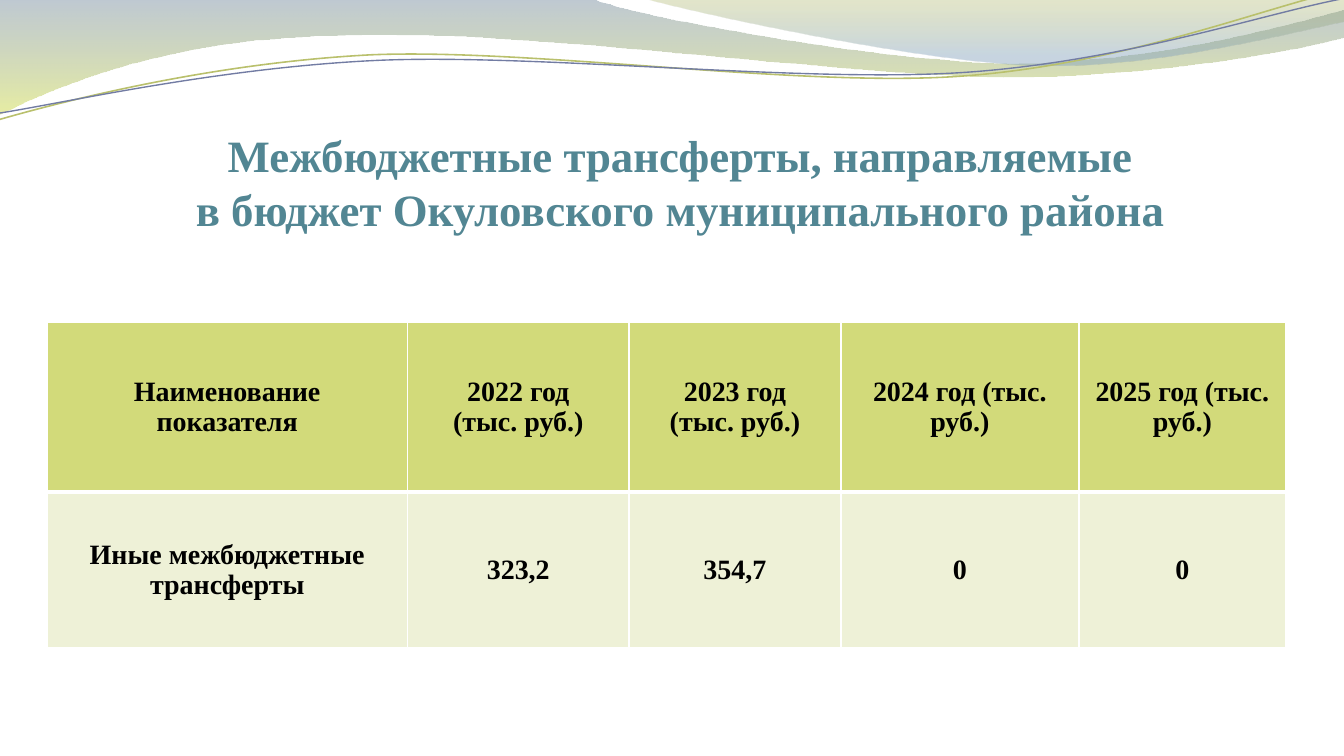
import lxml.etree
import pptx
import pptx.dml.color
import pptx.enum.text
import pptx.oxml.ns
import pptx.util

Cm = pptx.util.Cm
Pt = pptx.util.Pt
qn = pptx.oxml.ns.qn
FONT = "Times New Roman"


def color(hex_string):
    return pptx.dml.color.RGBColor.from_string(hex_string)


def add_wave(slide, start, segments, closed):
    builder = slide.shapes.build_freeform(Cm(start[0]), Cm(start[1]))
    for segment in segments:
        points = zip(segment[::2], segment[1::2])
        builder.add_line_segments([(Cm(x), Cm(y)) for x, y in points], close=False)
    shape = builder.convert_to_shape()
    shape.shadow.inherit = False
    outline = next(shape._element.iter(qn("a:path")))
    lines = iter(outline.findall(qn("a:lnTo")))
    for segment in segments:
        line = next(lines)
        if len(segment) == 6:
            line.tag = qn("a:cubicBezTo")
            for control in (next(lines), next(lines)):
                line.append(control[0])
                outline.remove(control)
    if closed:
        lxml.etree.SubElement(outline, qn("a:close"))
    return shape


presentation = pptx.Presentation()
presentation.slide_width = Cm(25.4)
presentation.slide_height = Cm(14.29)
slide = presentation.slides.add_slide(presentation.slide_layouts[5])

bands = [
    ((0, 0),
     [(11.18, -0.03), (12.09, 0.33, 16.87, 1.19, 19.25, 1.19),
      (21.67, 1.19, 24.33, 0.48, 25.4, 0.18), (25.43, 0.69),
      (24.97, 0.84, 22.1, 1.45, 18.95, 1.45), (15.8, 1.42, 9.7, 0.53, 6.53, 0.66),
      (3.28, 0.69, 1.17, 1.57, -0.03, 2.16), (0, 0)],
     [(0, "72889B", 45), (1, "D3DE57", 55)]),
    ((12.17, -0.03),
     [(12.93, 0.2, 17.32, 1.17, 19.53, 1.24), (21.74, 1.32, 24.41, 0.61, 25.4, 0.41),
      (25.4, 0), (12.17, -0.03)],
     [(0, "A4AC50", 30), (0.8, "84A3BD", 45)]),
]
for start, segments, stops in bands:
    band = add_wave(slide, start, segments, True)
    band.line.fill.background()
    band.fill.gradient()
    band.fill.gradient_angle = 270
    for stop, (position, hex_string, opacity) in zip(band.fill.gradient_stops, stops):
        stop.position = position
        stop.color.rgb = color(hex_string)
    gradient_colors = band._element.spPr.iter(qn("a:srgbClr"))
    for element, (position, hex_string, opacity) in zip(gradient_colors, stops):
        lxml.etree.SubElement(element, qn("a:alpha"), val=str(opacity * 1000))

curves = [
    ((-0.05, 1.66),
     [(1.18, 1.37, 4.01, 0.78, 7.04, 0.77), (10.06, 0.79, 15.01, 1.76, 18.06, 1.7),
      (21.16, 1.64, 23.9, 0.68, 25.4, 0.42)], "B9C06C", 0.85),
    ((-0.05, 1.54),
     [(1.16, 1.41, 4.17, 0.87, 7.19, 0.88), (10.24, 0.9, 15.14, 1.69, 18.2, 1.63),
      (21.23, 1.57, 23.94, 0.78, 25.45, 0.57)], "727CA3", 0.75),
]
for start, segments, hex_string, width in curves:
    curve = add_wave(slide, start, segments, False)
    curve.rotation = 357.3
    curve.fill.background()
    curve.line.color.rgb = color(hex_string)
    curve.line.width = Pt(width)

title = slide.shapes.title
title.left, title.top, title.width, title.height = Cm(1.8), Cm(2.29), Cm(22.1), Cm(1.55)
title_frame = title.text_frame
title_frame.text = "Межбюджетные трансферты, направляемые\nв бюджет Окуловского муниципального района"
title_frame.auto_size = pptx.enum.text.MSO_AUTO_SIZE.NONE
title_frame.vertical_anchor = pptx.enum.text.MSO_ANCHOR.TOP
title_frame.margin_top = Cm(0.13)
for paragraph in title_frame.paragraphs:
    paragraph.alignment = pptx.enum.text.PP_ALIGN.CENTER
    paragraph.font.name = FONT
    paragraph.font.size = Pt(24)
    paragraph.font.bold = True
    paragraph.font.color.rgb = color("528693")

rows = [
    ["Наименование показателя", "2022 год\n(тыс. руб.)", "2023 год\n(тыс. руб.)",
     "2024 год (тыс. руб.)", "2025 год (тыс. руб.)"],
    ["Иные межбюджетные трансферты", "323,2", "354,7", "0", "0"],
]
column_widths = [6.81, 4.19, 4, 4.5, 3.91]
row_heights = [3.21, 2.95]
row_fills = ["D2DA7A", "EEF1D7"]
table = slide.shapes.add_table(2, 5, Cm(0.89), Cm(6.09), Cm(sum(column_widths)),
                               Cm(sum(row_heights))).table
for column, width in zip(table.columns, column_widths):
    column.width = Cm(width)
for row_index, texts in enumerate(rows):
    table.rows[row_index].height = Cm(row_heights[row_index])
    for column_index, text in enumerate(texts):
        cell = table.cell(row_index, column_index)
        cell.text = text
        cell.vertical_anchor = pptx.enum.text.MSO_ANCHOR.MIDDLE
        cell.margin_left = cell.margin_right = Cm(0.25)
        cell.margin_top = cell.margin_bottom = Cm(0.1)
        border_widths = {"a:lnL": 1, "a:lnR": 1,
                         "a:lnT": 3 if row_index == 1 else 1,
                         "a:lnB": 3 if row_index == 0 else 1}
        for tag, width in border_widths.items():
            border = lxml.etree.SubElement(cell._tc.get_or_add_tcPr(), qn(tag), w=str(Pt(width)))
            border_fill = lxml.etree.SubElement(border, qn("a:solidFill"))
            lxml.etree.SubElement(border_fill, qn("a:srgbClr"), val="FFFFFF")
        cell.fill.solid()
        cell.fill.fore_color.rgb = color(row_fills[row_index])
        for paragraph in cell.text_frame.paragraphs:
            paragraph.alignment = pptx.enum.text.PP_ALIGN.CENTER
            paragraph.font.name = FONT
            paragraph.font.size = Pt(15)
            paragraph.font.bold = True
            paragraph.font.color.rgb = color("000000")

presentation.save("out.pptx")
